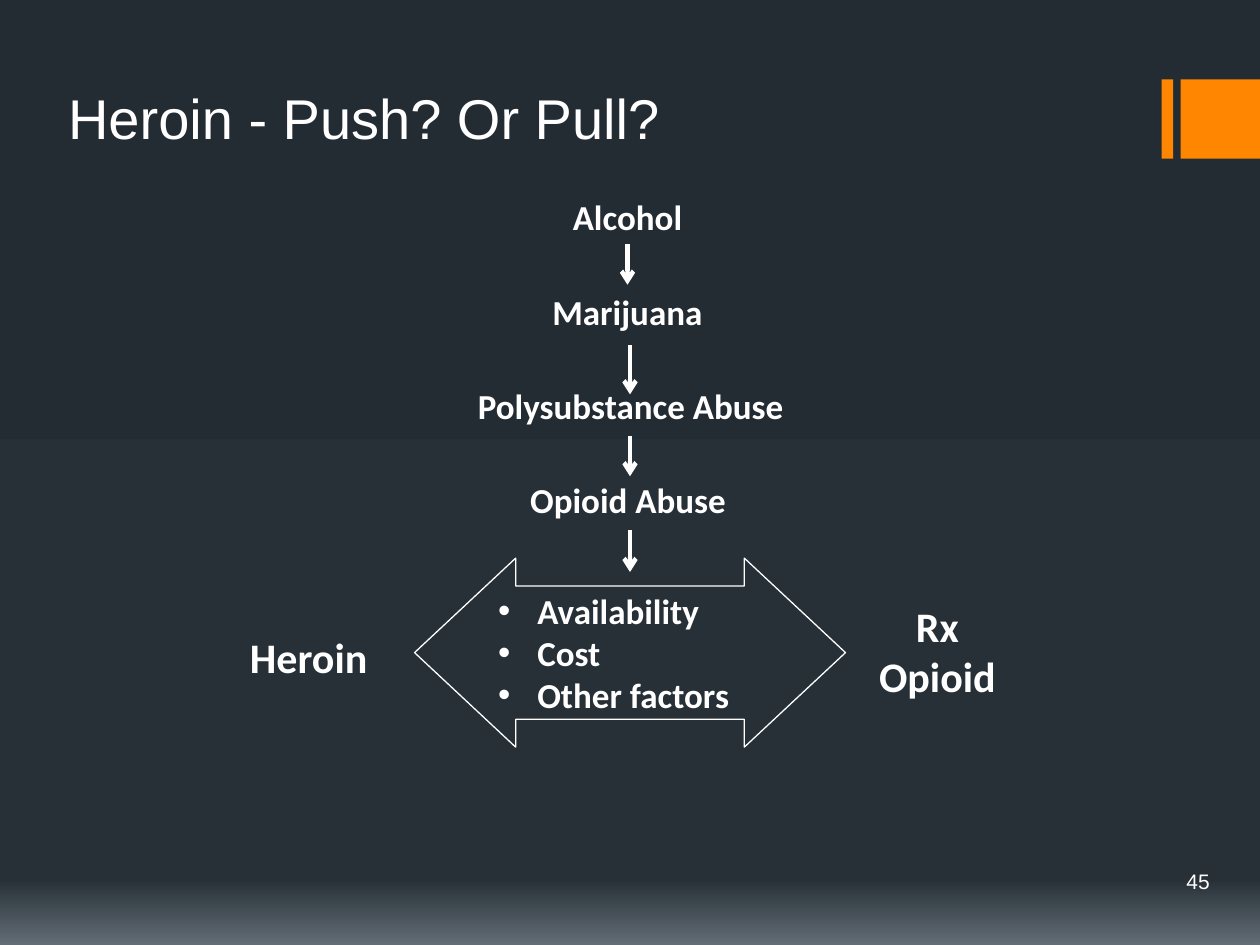
from lxml.etree import SubElement
from pptx import Presentation
from pptx.dml.color import RGBColor
from pptx.enum.shapes import MSO_CONNECTOR as Connector, MSO_SHAPE as Shape
from pptx.enum.text import MSO_ANCHOR as Anchor, PP_ALIGN as Align
from pptx.oxml import parse_xml
from pptx.oxml.ns import nsdecls, qn
from pptx.util import Inches, Pt

WHITE, ORANGE = "FFFFFF", "FF8600"
BACKGROUND = [(0, "242C33"), (93, "273037"), (100, "636D76")]
TITLE = "Heroin - Push? Or Pull?"
PAGE_NUMBER = "45"
BARS = [(9.22, 0.09), (9.37, 0.63)]  # left, width
STEPS = [  # text, left, top, width
    ("Alcohol", 4.44, 1.5, 1.08),
    ("Marijuana", 4.28, 2.26, 1.4),
    ("Polysubstance Abuse", 3.68, 3, 2.65),
    ("Opioid Abuse", 4.1, 3.75, 1.77),
]
ARROWS = [(4.98, 1.94, 2.26), (5, 2.74, 3.13), (5, 3.46, 3.78), (5, 4.21, 4.54)]  # x, top, bottom
OUTCOMES = [("Heroin", 1.48, 4.88, 1.94), ("Rx Opioid", 6.5, 4.83, 1.88)]
FACTORS = ["Availability", "Cost", "Other factors"]
STEP_FONT = {"name": "Calibri", "size": Pt(20), "bold": True}
OUTCOME_FONT = {"name": "Calibri", "size": Pt(24), "bold": True}
TITLE_FONT = {"name": "Arial", "size": Pt(32)}
NUMBER_FONT = {"name": "Arial", "size": Pt(12)}


def color(value):
    """Turn a hex string into a colour."""
    return RGBColor.from_string(value)


def inches(*values):
    """Turn numbers into lengths."""
    return [Inches(value) for value in values]


def write(shape, lines, font, align, anchor, wrap=True):
    """Put one paragraph per line into a shape, in white."""
    frame = shape.text_frame
    frame.text = "\n".join(lines)
    frame.word_wrap, frame.vertical_anchor = wrap, anchor
    for para in frame.paragraphs:
        para.alignment = align
        for span in para.runs:
            for name, value in font.items():
                setattr(span.font, name, value)
            span.font.color.rgb = color(WHITE)


def add_shape(page, kind, place, fill=None, line=None):
    """Add a preset shape without shadow, with optional fill and line."""
    shape = page.shapes.add_shape(kind, *inches(*place))
    shape.shadow.inherit = False
    if fill:
        shape.fill.solid()
        shape.fill.fore_color.rgb = color(fill)
    else:
        shape.fill.background()
    if line:
        shape.line.color.rgb, shape.line.width = color(line), Pt(0.75)
    else:
        shape.line.fill.background()
    return shape


def add_arrow(page, x, top, bottom):
    """Add a downward arrow."""
    arrow = page.shapes.add_connector(Connector.STRAIGHT, *inches(x, top, x, bottom))
    arrow.line.color.rgb, arrow.line.width = color(WHITE), Pt(2.5)
    SubElement(arrow.line._get_or_add_ln(), qn("a:tailEnd"), type="arrow")
    SubElement(arrow._element.spPr, qn("a:effectLst"))


def paint_background(page):
    """Fill the page with a vertical gradient."""
    fill = page.background.fill
    fill.gradient()
    gradient = page._element.cSld.find(".//" + qn("a:gradFill"))
    stops = "".join(f'<a:gs pos="{at * 1000}"><a:srgbClr val="{value}"/></a:gs>'
                    for at, value in BACKGROUND)
    gradient.getparent().replace(gradient, parse_xml(
        f'<a:gradFill {nsdecls("a")} rotWithShape="1"><a:gsLst>{stops}</a:gsLst>'
        '<a:lin ang="5400000" scaled="0"/></a:gradFill>'))


def add_bullets(shape, indent):
    """Give every paragraph a hanging bullet."""
    for para in shape.text_frame.paragraphs:
        props = para._p.get_or_add_pPr()
        props.set("marL", str(Inches(indent)))
        props.set("indent", str(-Inches(indent)))
        SubElement(props, qn("a:buFont"), typeface="Arial")
        SubElement(props, qn("a:buChar"), char="•")


deck = Presentation()
deck.slide_width, deck.slide_height = inches(10, 7.5)
page = deck.slides.add_slide(deck.slide_layouts[5])
paint_background(page)

for left, width in BARS:
    add_shape(page, Shape.RECTANGLE, (left, 0.63, width, 0.63), fill=ORANGE)

title = page.shapes.title
title.left, title.top, title.width, title.height = inches(0.44, 0.39, 8, 0.86)
write(title, [TITLE], TITLE_FONT, Align.LEFT, Anchor.BOTTOM)

for text, left, top, width in OUTCOMES:
    oval = add_shape(page, Shape.OVAL, (left, top, width, 0.67))
    write(oval, [text], OUTCOME_FONT, Align.CENTER, Anchor.MIDDLE)

factors = add_shape(page, Shape.LEFT_RIGHT_ARROW, (3.29, 4.43, 3.42, 1.5), line=WHITE)
factors.adjustments[0], factors.adjustments[1] = 0.705, 0.535
write(factors, FACTORS, STEP_FONT, Align.LEFT, Anchor.MIDDLE)
add_bullets(factors, 0.31)

for text, left, top, width in STEPS:
    box = page.shapes.add_textbox(*inches(left, top, width, 0.44))
    write(box, [text], STEP_FONT, Align.CENTER, Anchor.TOP, wrap=False)
for arrow in ARROWS:
    add_arrow(page, *arrow)

number = page.shapes.add_textbox(*inches(8.67, 6.83, 1.03, 0.33))
write(number, [PAGE_NUMBER], NUMBER_FONT, Align.RIGHT, Anchor.MIDDLE)

deck.save("out.pptx")
